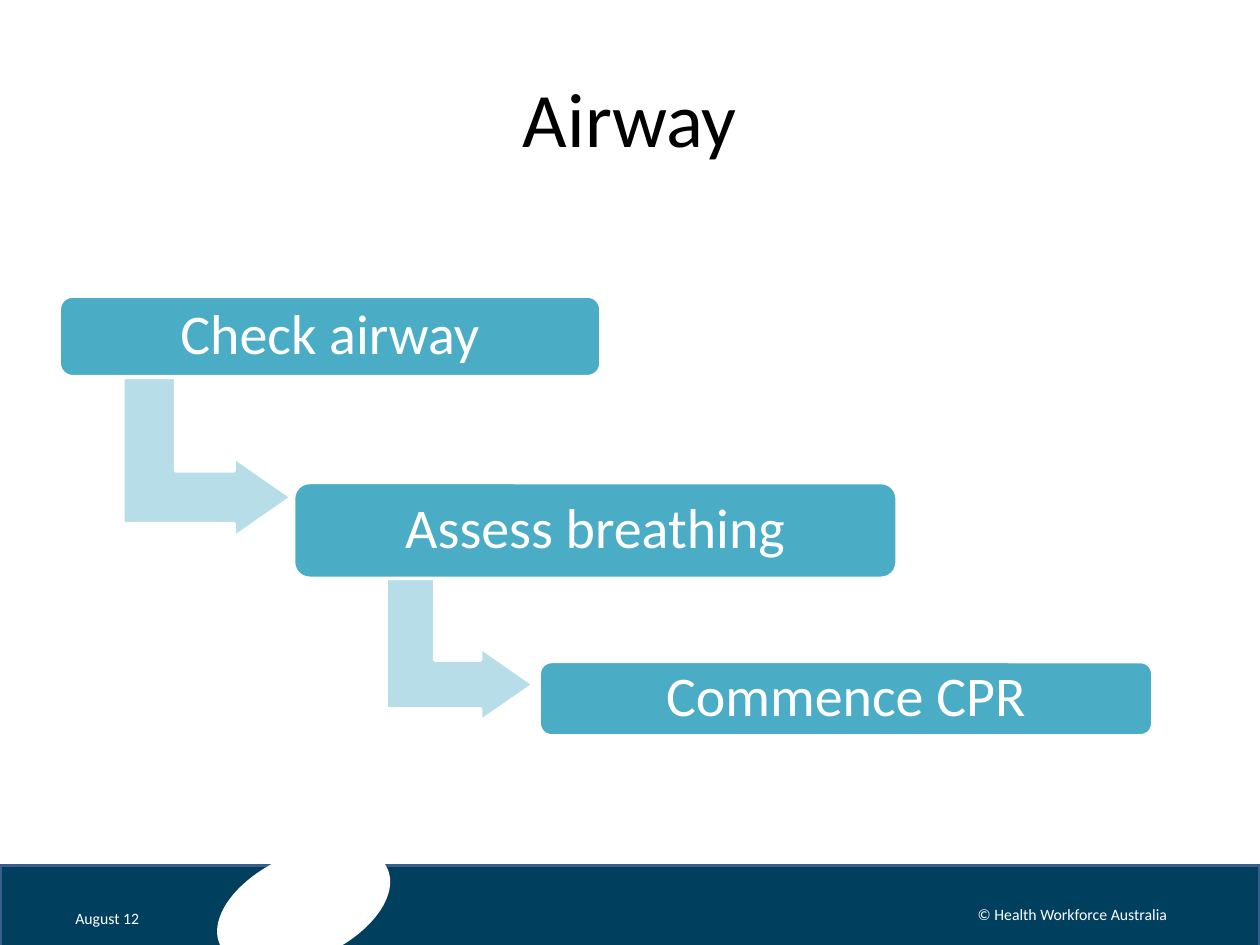
from dataclasses import dataclass

from pptx import Presentation
from pptx.dml.color import RGBColor
from pptx.enum import shapes, text
from pptx.util import Inches, Pt

WHITE, BLACK = "FFFFFF", "000000"
NAVY, BAND_EDGE = "003F5E", "3A5F8C"
TEAL, PALE_TEAL = "4BACC6", "B7DEE8"
Box = tuple[float, float, float, float]


@dataclass
class Step:
    label: str
    box: Box
    arrow: Box | None = None


STEPS = [
    Step("Check airway", (0.47, 2.35, 4.3, 0.64), (1.01, 2.96, 1.27, 1.34)),
    Step("Assess breathing", (2.33, 3.83, 4.79, 0.76), (3.06, 4.55, 1.18, 1.17)),
    Step("Commence CPR", (4.28, 5.25, 4.87, 0.59)),
]


def rgb(code: str) -> RGBColor:
    return RGBColor.from_string(code)


def add_block(slide, kind, box: Box, fill: str, line: str | None = None,
              rotation: float = 0, adjustments: tuple = ()):
    block = slide.shapes.add_shape(kind, *map(Inches, box))
    block.shadow.inherit = False
    block.rotation = rotation
    block.fill.solid()
    block.fill.fore_color.rgb = rgb(fill)
    if line:
        block.line.color.rgb = rgb(line)
        block.line.width = Pt(2)
    else:
        block.line.fill.background()
    for index, value in enumerate(adjustments):
        block.adjustments[index] = value
    return block


def write(holder, words: str, *, size: float, color: str = WHITE,
          align=text.PP_ALIGN.CENTER, inset: float | None = None,
          line_spacing: float | None = None) -> None:
    frame = holder.text_frame
    frame.word_wrap = True
    frame.vertical_anchor = text.MSO_ANCHOR.MIDDLE
    if inset is not None:
        frame.margin_left = frame.margin_right = Inches(inset)
        frame.margin_top = frame.margin_bottom = Inches(inset)
    paragraph = frame.paragraphs[0]
    paragraph.text = words
    paragraph.alignment = align
    paragraph.line_spacing = line_spacing
    paragraph.font.name = "Calibri"
    paragraph.font.size = Pt(size)
    paragraph.font.color.rgb = rgb(color)


def add_label(slide, box: Box, words: str, **style) -> None:
    write(slide.shapes.add_textbox(*map(Inches, box)), words, **style)


def add_step(slide, step: Step) -> None:
    """Draw a step and, if it has one, the arrow to the next step."""
    kinds = shapes.MSO_SHAPE
    if step.arrow:
        add_block(slide, kinds.BENT_UP_ARROW, step.arrow, PALE_TEAL, WHITE,
                  rotation=90, adjustments=(0.33, 0.25, 0.36))
    card = add_block(slide, kinds.ROUNDED_RECTANGLE, step.box, TEAL, WHITE)
    write(card, step.label, size=32, inset=0.13, line_spacing=0.9)


def main() -> None:
    deck = Presentation()
    deck.slide_width, deck.slide_height = Inches(10), Inches(7.5)
    slide = deck.slides.add_slide(deck.slide_layouts[6])

    add_block(slide, shapes.MSO_SHAPE.RECTANGLE, (0, 6.87, 10, 0.65), NAVY, BAND_EDGE)
    add_block(slide, shapes.MSO_SHAPE.OVAL, (1.68, 6.78, 1.46, 0.83), WHITE,
              rotation=335.7)
    add_label(slide, (0.5, 0.3, 9, 1.25), "Airway", size=44, color=BLACK)
    for step in STEPS:
        add_step(slide, step)
    add_label(slide, (0.5, 7.14, 0.8, 0.29), "August 12", size=9,
              align=text.PP_ALIGN.LEFT)
    add_label(slide, (7.44, 7.06, 2.14, 0.4), "© Health Workforce Australia", size=9)

    deck.save("out.pptx")


if __name__ == "__main__":
    main()
